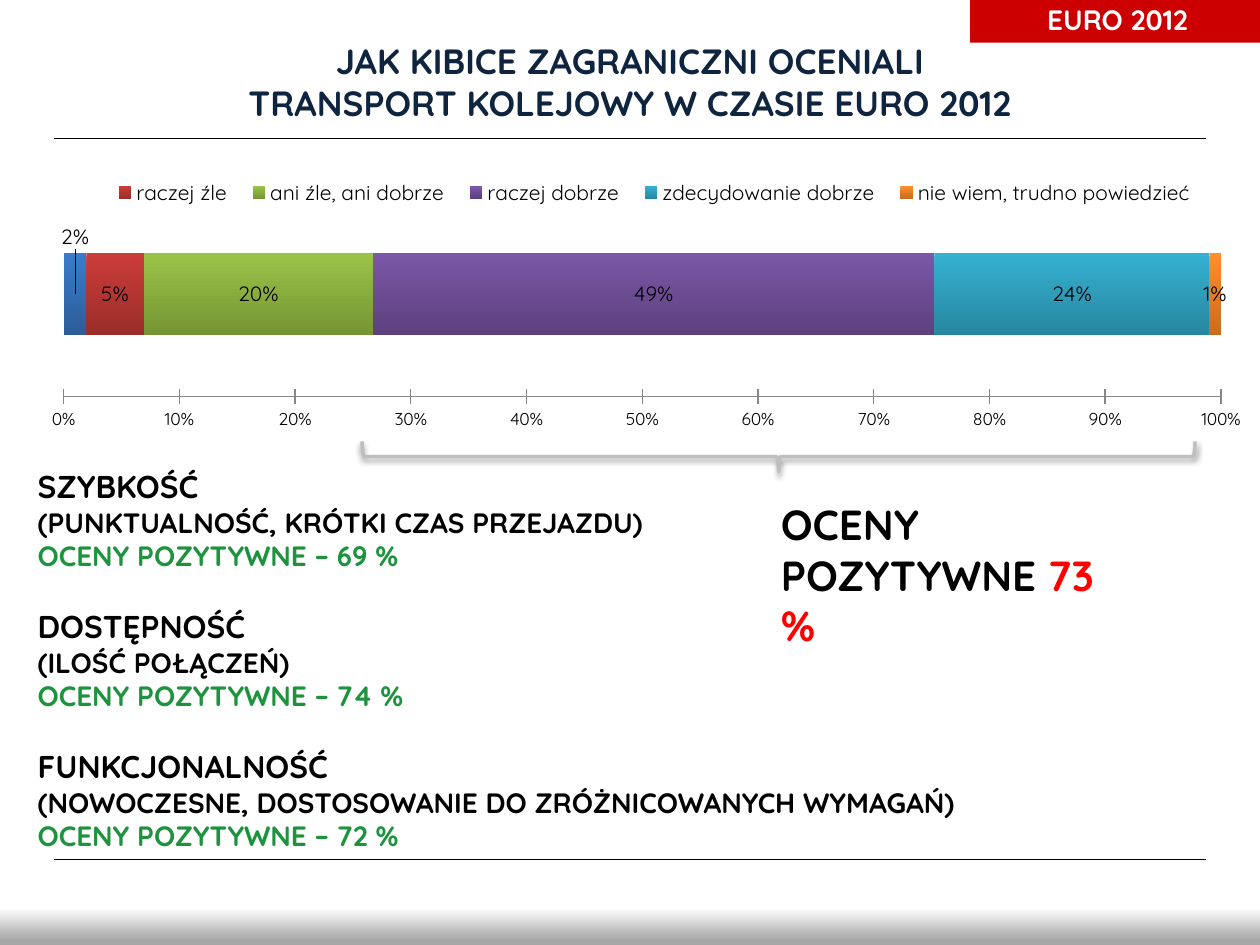
"""Builds the slide on how foreign fans rated rail transport during EURO 2012."""
from dataclasses import dataclass

from pptx import Presentation
from pptx.chart.data import CategoryChartData
from pptx.dml.color import RGBColor
from pptx.enum.chart import XL_CHART_TYPE, XL_LABEL_POSITION, XL_LEGEND_POSITION, XL_TICK_MARK
from pptx.enum.shapes import MSO_CONNECTOR, MSO_SHAPE
from pptx.enum.text import MSO_ANCHOR, MSO_AUTO_SIZE, PP_ALIGN
from pptx.oxml import parse_xml
from pptx.oxml.ns import nsdecls, qn
from pptx.util import Cm, Pt

STACKED = XL_CHART_TYPE.BAR_STACKED_100
LABEL_CENTER = XL_LABEL_POSITION.CENTER
LEGEND_TOP = XL_LEGEND_POSITION.TOP
TICK_CROSS, TICK_NONE = XL_TICK_MARK.CROSS, XL_TICK_MARK.NONE
STRAIGHT = MSO_CONNECTOR.STRAIGHT
RECTANGLE, RIGHT_BRACE = MSO_SHAPE.RECTANGLE, MSO_SHAPE.RIGHT_BRACE
MIDDLE, NO_AUTOFIT = MSO_ANCHOR.MIDDLE, MSO_AUTO_SIZE.NONE
CENTER, LEFT = PP_ALIGN.CENTER, PP_ALIGN.LEFT
PERCENT = "0%"

RATINGS = [
    ("zdecydowanie źle", 0.02, "3A7CCB", "2C5D98"),
    ("raczej źle", 0.05, "CB3D3A", "9B2D2A"),
    ("ani źle, ani dobrze", 0.2, "9BC348", "769535"),
    ("raczej dobrze", 0.49, "7B57A8", "5D417E"),
    ("zdecydowanie dobrze", 0.24, "36B1D2", "2787A0"),
    ("nie wiem, trudno powiedzieć", 0.01, "FF8F2A", "CB6C1D"),
]
CRITERIA = [
    ("SZYBKOŚĆ", "(PUNKTUALNOŚĆ, KRÓTKI CZAS PRZEJAZDU)", 69),
    ("DOSTĘPNOŚĆ", "(ILOŚĆ POŁĄCZEŃ)", 74),
    ("FUNKCJONALNOŚĆ", "(NOWOCZESNE, DOSTOSOWANIE DO ZRÓŻNICOWANYCH WYMAGAŃ)", 72),
]


@dataclass(frozen=True)
class Theme:
    """Colours, typeface and type sizes of the slide."""
    font: str = "Quicksand"
    ink: str = "000000"
    heading: str = "0F243E"
    paper: str = "FFFFFF"
    tag: str = "CC0000"
    positive: str = "1D933D"
    accent: str = "FF0000"
    footer: str = "A6A6A6"
    brace: str = "BFBFBF"
    axis: str = "868686"
    axis_size: int = 10
    label_size: int = 12
    text_size: int = 16
    criterion_size: int = 18
    title_size: int = 20
    verdict_size: int = 24


def insert_layout(parent, index, **fractions):
    """Place a chart part by fractions of the chart area."""
    for old in parent.findall(qn("c:layout")):
        parent.remove(old)
    settings = dict(fractions)
    if "w" in settings:
        settings = {"xMode": "edge", "yMode": "edge", **settings}
    if parent.tag == qn("c:plotArea"):
        settings = {"layoutTarget": "inner", **settings}
    body = "".join(f'<c:{name} val="{value}"/>' for name, value in settings.items())
    parent.insert(index, parse_xml(
        f'<c:layout {nsdecls("c")}><c:manualLayout>{body}</c:manualLayout></c:layout>'))


def shade(fill, start, end, start_at=0.0, end_at=1.0):
    """Fill from top to bottom with two colours."""
    fill.gradient()
    fill.gradient_angle = 270
    for stop, color, position in zip(fill.gradient_stops, (start, end), (start_at, end_at)):
        stop.color.rgb = RGBColor.from_string(color)
        stop.position = position


class SlideBuilder:
    """Holds the theme and the current slide."""

    def __init__(self, slide, theme):
        self.slide = slide
        self.theme = theme

    def style(self, font, size, color=None, bold=True):
        font.name = self.theme.font
        font.size = Pt(size)
        font.bold = bold
        font.color.rgb = RGBColor.from_string(color or self.theme.ink)

    def title(self, text, left, top, width, height):
        heading = self.slide.shapes.title
        heading.left, heading.top = Cm(left), Cm(top)
        heading.width, heading.height = Cm(width), Cm(height)
        frame = heading.text_frame
        frame.text = text
        frame.auto_size = NO_AUTOFIT
        frame.vertical_anchor = MIDDLE
        frame.paragraphs[0].alignment = CENTER
        self.style(frame.paragraphs[0].font, self.theme.title_size, self.theme.heading)

    def rule(self, left, right, top):
        line = self.slide.shapes.add_connector(STRAIGHT, Cm(left), Cm(top), Cm(right), Cm(top))
        line.line.width = Pt(0.75)
        line.line.color.rgb = RGBColor.from_string(self.theme.ink)
        line._element.spPr.append(parse_xml(f'<a:effectLst {nsdecls("a")}/>'))

    def shape(self, preset, left, top, width, height):
        shape = self.slide.shapes.add_shape(preset, Cm(left), Cm(top), Cm(width), Cm(height))
        shape.shadow.inherit = False
        shape.line.fill.background()
        return shape

    def tag(self, text, left, top, width, height):
        tag = self.shape(RECTANGLE, left, top, width, height)
        tag.fill.solid()
        tag.fill.fore_color.rgb = RGBColor.from_string(self.theme.tag)
        tag.text_frame.text = text
        paragraph = tag.text_frame.paragraphs[0]
        paragraph.alignment = CENTER
        self.style(paragraph.font, self.theme.text_size, self.theme.paper)

    def footer(self, left, top, width, height):
        band = self.shape(RECTANGLE, left, top, width, height)
        shade(band.fill, self.theme.paper, self.theme.footer, 0.58, 0.95)

    def brace(self, left, top, width, height):
        brace = self.shape(RIGHT_BRACE, left, top, width, height)
        brace.rotation = 90
        brace.adjustments[0], brace.adjustments[1] = 0.08, 0.5
        brace.fill.background()
        brace.line.width = Pt(2)
        brace.line.color.rgb = RGBColor.from_string(self.theme.brace)
        brace._element.spPr.find(qn("a:effectLst")).append(parse_xml(
            f'<a:outerShdw {nsdecls("a")} blurRad="{Pt(3.1)}" dist="{Pt(1.6)}" dir="5400000" '
            'rotWithShape="0"><a:srgbClr val="000000"><a:alpha val="38000"/></a:srgbClr>'
            '</a:outerShdw>'))

    def text(self, paragraphs, left, top, width, height):
        """Write paragraphs given as (space before, [(text, size, colour), ...])."""
        box = self.slide.shapes.add_textbox(Cm(left), Cm(top), Cm(width), Cm(height))
        frame = box.text_frame
        frame.word_wrap = True
        for index, (space, parts) in enumerate(paragraphs):
            paragraph = frame.add_paragraph() if index else frame.paragraphs[0]
            paragraph.alignment = LEFT
            if space:
                paragraph.space_before = Pt(space)
            if len(parts) == 1:
                paragraph.text = parts[0][0]
                self.style(paragraph.font, *parts[0][1:])
                continue
            for words, size, color in parts:
                line, broken, _ = words.partition("\v")
                run = paragraph.add_run()
                run.text = line
                self.style(run.font, size, color)
                if broken:
                    paragraph.add_line_break()

    def ratings_chart(self, ratings, left, top, width, height):
        data = CategoryChartData(number_format=PERCENT)
        data.categories = ["1"]
        for name, share, *_ in ratings:
            data.add_series(name, [share])
        chart = self.slide.shapes.add_chart(
            STACKED, Cm(left), Cm(top), Cm(width), Cm(height), data).chart
        self.style(chart.font, self.theme.axis_size, bold=False)
        chart.has_title = False
        plot = chart.plots[0]
        plot.gap_width, plot.overlap = 150, 100
        plot.vary_by_categories = False
        for series, (*_, light, dark) in zip(plot.series, ratings):
            shade(series.format.fill, light, dark)
            labels = series.data_labels
            labels.show_value = True
            labels.number_format, labels.number_format_is_linked = PERCENT, False
            labels.position = LABEL_CENTER
            self.style(labels.font, self.theme.label_size, bold=False)
        self.style(plot.series[0].points[0].data_label.font, self.theme.label_size, bold=False)
        insert_layout(chart.element.xpath(".//c:dLbl")[0], 1, x=0.0, y=-0.22)

        chart.category_axis.visible = False
        scale = chart.value_axis
        scale.minimum_scale, scale.maximum_scale, scale.major_unit = 0, 1, 0.1
        scale.has_major_gridlines = False
        scale.major_tick_mark, scale.minor_tick_mark = TICK_CROSS, TICK_NONE
        scale.tick_labels.number_format = PERCENT
        scale.tick_labels.number_format_is_linked = False
        scale.format.line.color.rgb = RGBColor.from_string(self.theme.axis)
        insert_layout(chart.element.xpath(".//c:plotArea")[0], 0, x=0.02, y=0.1, w=0.95, h=0.79)

        chart.has_legend = True
        legend = chart.legend
        legend.position, legend.include_in_layout = LEGEND_TOP, False
        self.style(legend.font, self.theme.label_size, bold=False)
        key = chart.element.xpath(".//c:legend")[0]
        key.insert(1, parse_xml(
            f'<c:legendEntry {nsdecls("c")}><c:idx val="{len(ratings) - 1}"/>'
            '<c:delete val="1"/></c:legendEntry>'))
        insert_layout(key, 2, x=0.05, y=0.05, w=0.91, h=0.11)


def main():
    """Build and save the slide."""
    theme = Theme()
    deck = Presentation()
    deck.slide_width, deck.slide_height = Cm(25.4), Cm(19.05)
    page = SlideBuilder(deck.slides.add_slide(deck.slide_layouts[5]), theme)
    page.footer(0, 17.27, 25.4, 1.78)
    for height in (2.79, 17.32):
        page.rule(1.09, 24.31, height)
    page.tag("EURO 2012", 19.56, -0.08, 5.94, 0.94)
    page.title("JAK KIBICE ZAGRANICZNI OCENIALI\vTRANSPORT KOLEJOWY W CZASIE EURO 2012",
               1.27, 0.76, 22.86, 1.75)
    criteria = []
    for index, (criterion, detail, score) in enumerate(CRITERIA):
        criteria += [
            (20 if index else 0, [(criterion + "\v", theme.criterion_size, theme.ink),
                                  (detail, theme.text_size, theme.ink)]),
            (0, [(f"OCENY POZYTYWNE – {score} %", theme.text_size, theme.positive)]),
        ]
    page.text(criteria, 0.51, 9.3, 23.6, 8.03)
    page.brace(15.39, 0.81, 0.61, 16.79)
    page.text([(0, [("OCENY", theme.verdict_size, theme.ink)]),
               (0, [("POZYTYWNE ", theme.verdict_size, theme.ink),
                    ("73 %", theme.verdict_size, theme.accent)])], 15.49, 9.93, 7.59, 2.31)
    page.ratings_chart(RATINGS, 0.79, 3.33, 24.56, 5.33)
    deck.save("out.pptx")


if __name__ == "__main__":
    main()
